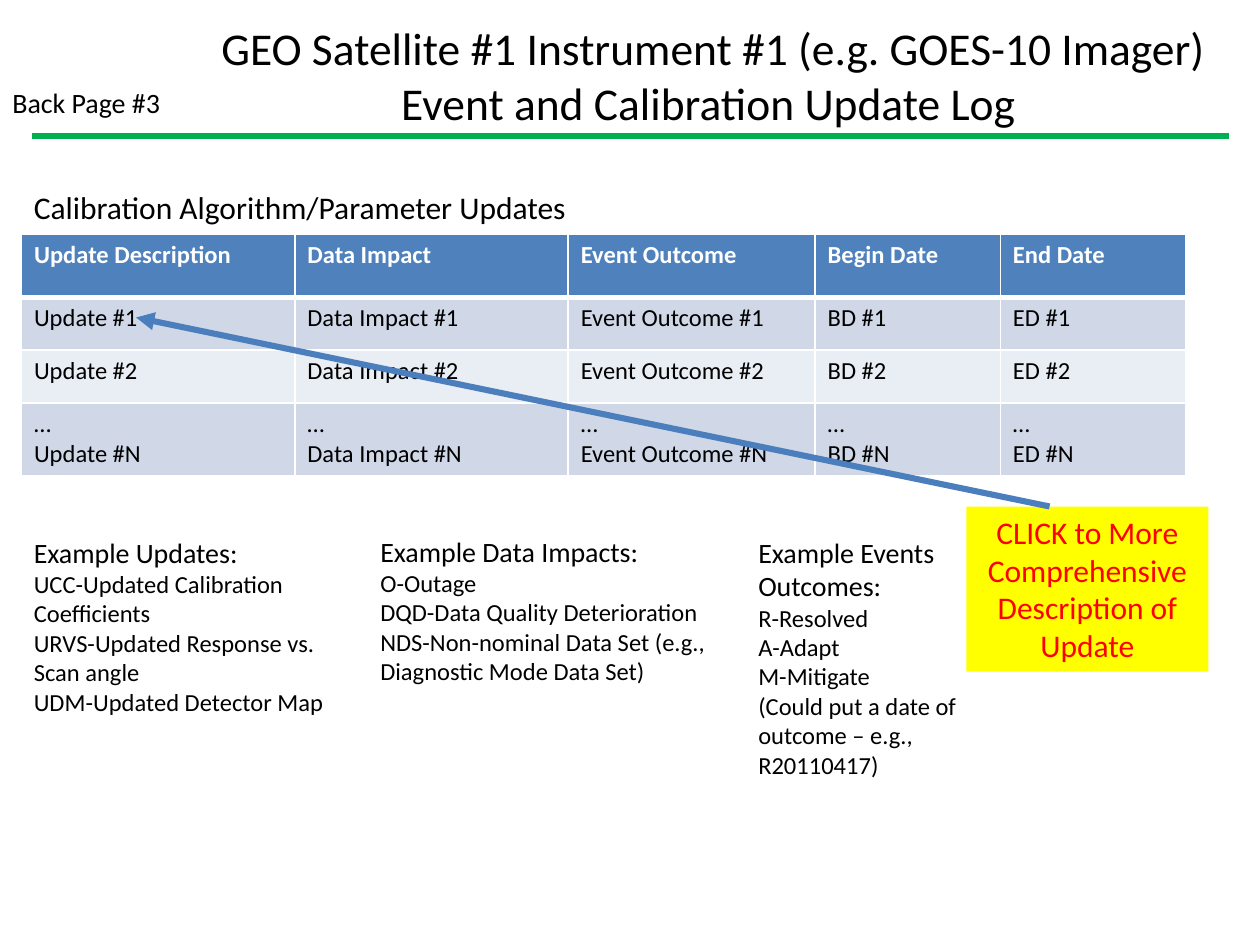
from lxml import etree
from pptx import Presentation
from pptx.dml.color import RGBColor
from pptx.enum import shapes, text
from pptx.oxml import ns
from pptx.util import Inches, Pt

TITLE = ["GEO Satellite #1 Instrument #1 (e.g. GOES-10 Imager)",
         "Event and Calibration Update Log "]
PAGE_LABEL = ["Back Page #3"]
TABLE_HEADING = ["Calibration Algorithm/Parameter Updates"]
CALLOUT = ["CLICK to More Comprehensive Description of Update"]

HEADERS = ["Update Description", "Data Impact", "Event Outcome", "Begin Date", "End Date"]
ENTRIES = ["Update", "Data Impact", "Event Outcome", "BD", "ED"]
ROW_PATTERNS = ["{} #1", "{} #2", "…\n{} #N"]
COLUMN_WIDTHS = [2.17, 2.17, 1.96, 1.47, 1.47]
ROW_HEIGHTS = [0.5, 0.42, 0.42, 0.58]
ROW_FILLS = ["4F81BD", "D0D8E8", "E9EDF4", "D0D8E8"]

LEGENDS = [
    ((0.17, 4.2, 2.83, 1.55),
     ["Example Updates:", "UCC-Updated Calibration Coefficients",
      "URVS-Updated Response vs. Scan angle", "UDM-Updated Detector Map"]),
    ((2.92, 4.19, 2.83, 1.31),
     ["Example Data Impacts:", "O-Outage", "DQD-Data Quality Deterioration",
      "NDS-Non-nominal Data Set (e.g., Diagnostic Mode Data Set)"]),
    ((5.92, 4.2, 1.83, 2.05),
     ["Example Events Outcomes:", "R-Resolved", "A-Adapt", "M-Mitigate",
      "(Could put a date of outcome – e.g., R20110417)"]),
]


def color(value):
    return RGBColor.from_string(value)


def write(frame, lines, sizes, ink="000000", bold=False, align=text.PP_ALIGN.LEFT):
    frame.word_wrap = True
    frame.text = "\n".join(lines)
    for index, para in enumerate(frame.paragraphs):
        para.alignment = align
        for span in para.runs:
            span.font.name = "Calibri"
            span.font.size = Pt(sizes[min(index, len(sizes) - 1)])
            span.font.bold = bold
            span.font.color.rgb = color(ink)


def add_text(page, place, lines, sizes, **style):
    box = page.shapes.add_textbox(*map(Inches, place))
    write(box.text_frame, lines, sizes, **style)


def add_line(page, start, end, ink, width, arrow=False):
    line = page.shapes.add_connector(shapes.MSO_CONNECTOR.STRAIGHT,
                                     *map(Inches, start + end))
    line.line.color.rgb = color(ink)
    line.line.width = Pt(width)
    if arrow:
        etree.SubElement(line.line._get_or_add_ln(), ns.qn("a:tailEnd"), type="triangle")
    etree.SubElement(line._element.spPr, ns.qn("a:effectLst"))


def add_borders(cell, widths):
    properties = cell._tc.get_or_add_tcPr()
    for index, (side, width) in enumerate(widths.items()):
        border = etree.Element(ns.qn(f"a:ln{side}"), w=str(Pt(width)))
        fill = etree.SubElement(border, ns.qn("a:solidFill"))
        etree.SubElement(fill, ns.qn("a:srgbClr"), val="FFFFFF")
        properties.insert(index, border)


def add_update_table(page):
    rows = [HEADERS] + [[pattern.format(entry) for entry in ENTRIES]
                        for pattern in ROW_PATTERNS]
    frame = page.shapes.add_table(len(rows), len(HEADERS), Inches(0.17), Inches(1.86),
                                  Inches(sum(COLUMN_WIDTHS)), Inches(sum(ROW_HEIGHTS)))
    table = frame.table
    for column, width in zip(table.columns, COLUMN_WIDTHS):
        column.width = Inches(width)
    for index, values in enumerate(rows):
        table.rows[index].height = Inches(ROW_HEIGHTS[index])
        header = index == 0
        for cell, value in zip(table.rows[index].cells, values):
            write(cell.text_frame, [value], [14],
                  ink="FFFFFF" if header else "000000", bold=header)
            cell.fill.solid()
            cell.fill.fore_color.rgb = color(ROW_FILLS[index])
            add_borders(cell, {"L": 1, "R": 1, "T": 3 if index == 1 else 1,
                               "B": 3 if header else 1})


def add_callout(page):
    box = page.shapes.add_shape(shapes.MSO_SHAPE.RECTANGLE,
                                *map(Inches, (7.67, 4.02, 1.92, 1.31)))
    box.shadow.inherit = False
    box.fill.solid()
    box.fill.fore_color.rgb = color("FFFF00")
    box.line.fill.background()
    box.text_frame.vertical_anchor = text.MSO_ANCHOR.TOP
    write(box.text_frame, CALLOUT, [18], ink="FF0000", align=text.PP_ALIGN.CENTER)


def main():
    deck = Presentation()
    deck.slide_width, deck.slide_height = Inches(10), Inches(7.5)
    page = deck.slides.add_slide(deck.slide_layouts[6])

    add_line(page, (0.25, 1.08), (9.75, 1.08), "00B050", 3)
    add_text(page, (1.08, 0.11, 9.17, 0.98), TITLE, [26], align=text.PP_ALIGN.CENTER)
    add_text(page, (0.17, 1.44, 5, 0.4), TABLE_HEADING, [18])
    add_update_table(page)
    add_callout(page)
    add_line(page, (8.33, 4.02), (1.08, 2.52), "4B7EBC", 3.5, arrow=True)
    for place, lines in LEGENDS:
        add_text(page, place, lines, [16, 14])
    add_text(page, (0, 0.63, 1.67, 0.37), PAGE_LABEL, [16])

    deck.save("out.pptx")


if __name__ == "__main__":
    main()
